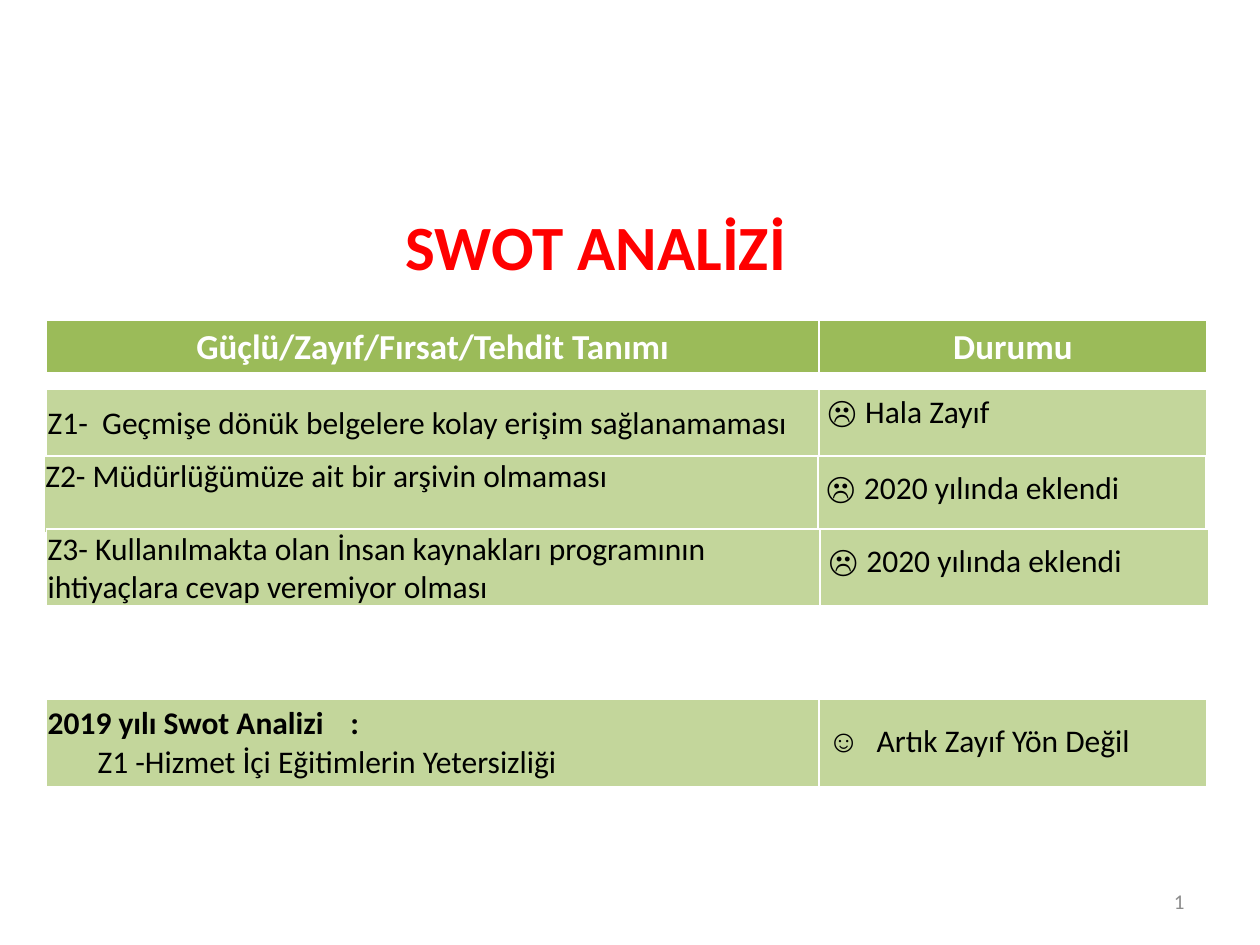
from lxml.etree import SubElement
from pptx import Presentation
from pptx.dml.color import RGBColor
from pptx.enum.text import MSO_ANCHOR as ANCHOR, MSO_AUTO_SIZE as AUTO, PP_ALIGN as ALIGN
from pptx.oxml.ns import qn
from pptx.util import Pt

GREEN, PALE, WHITE, BLACK = "9BBB59", "C3D69B", "FFFFFF", "000000"
LEFT = 26.6
HEADER = dict(name="Calibri", size=Pt(20), bold=True)
BODY = dict(name="Calibri", size=Pt(18), bold=False)
BODY_BOLD = {**BODY, "bold": True}
SYMBOL = {**BODY, "name": "Arial"}
TIGHT = dict(margin_left=Pt(0.7), margin_right=Pt(0.7), margin_top=Pt(0.7),
             margin_bottom=Pt(0))
STATUS = {**TIGHT, "margin_left": Pt(5), "margin_bottom": Pt(14.4),
          "vertical_anchor": ANCHOR.BOTTOM}


def rgb(color):
    return RGBColor.from_string(color)


def set_attrs(obj, values):
    for name, value in values.items():
        setattr(obj, name, value)


def add_run(p, text, font, color=BLACK):
    r = p.add_run()
    r.text = text
    set_attrs(r.font, font)
    r.font.color.rgb = rgb(color)


def add_tab_stop(p, pos):
    tabs = SubElement(p._p.get_or_add_pPr(), qn("a:tabLst"))
    SubElement(tabs, qn("a:tab"), pos=str(Pt(pos)), algn="l")


def set_borders(cell, bottom):
    """Draw white cell borders, 1 pt wide except for the bottom one."""
    tcPr = cell._tc.get_or_add_tcPr()
    sides = ("lnL", 1), ("lnR", 1), ("lnT", 1), ("lnB", bottom)
    for i, (side, width) in enumerate(sides):
        ln = SubElement(tcPr, qn(f"a:{side}"), w=str(Pt(width)))
        fill = SubElement(ln, qn("a:solidFill"))
        SubElement(fill, qn("a:srgbClr"), val=WHITE)
        tcPr.insert(i, ln)


def add_row_table(slide, left, top, height, fill, widths=(441.4, 221.8), bottom=1):
    """Add a one-row table and return its two cells."""
    frame = slide.shapes.add_table(1, 2, Pt(left), Pt(top), Pt(sum(widths)), Pt(height))
    table = frame.table
    for i, width in enumerate(widths):
        table.columns[i].width = Pt(width)
        cell = table.cell(0, i)
        cell.fill.solid()
        cell.fill.fore_color.rgb = rgb(fill)
        set_borders(cell, bottom)
    return table.cell(0, 0), table.cell(0, 1)


def add_title(slide):
    sp = slide.shapes.title
    set_attrs(sp, dict(left=Pt(65.5), top=Pt(115.2), width=Pt(550), height=Pt(51.1)))
    set_attrs(sp.text_frame, dict(auto_size=AUTO.NONE, vertical_anchor=ANCHOR.TOP))
    p = sp.text_frame.paragraphs[0]
    p.alignment = ALIGN.CENTER
    add_run(p, "SWOT ANALİZİ", dict(name="Calibri", size=Pt(36), bold=True), "FF0000")


def add_slide_number(slide, number):
    sp = slide.shapes.add_textbox(Pt(516), Pt(500.5), Pt(168), Pt(28.8))
    tf = sp.text_frame
    set_attrs(tf, dict(word_wrap=True, vertical_anchor=ANCHOR.MIDDLE))
    p = tf.paragraphs[0]
    p.alignment = ALIGN.RIGHT
    add_run(p, number, dict(name="Calibri", size=Pt(12)), "8C8C8C")
    field = p.runs[0]._r
    field.tag = qn("a:fld")
    field.set("id", "{B6F15528-21DE-4FAA-801E-634DDDAF4B2B}")
    field.set("type", "slidenum")


def add_header(slide):
    cells = add_row_table(slide, LEFT, 182.9, 29.8, GREEN, bottom=3)
    for cell, text in zip(cells, ("Güçlü/Zayıf/Fırsat/Tehdit Tanımı", "Durumu")):
        p = cell.text_frame.paragraphs[0]
        p.alignment = ALIGN.CENTER
        add_run(p, text, HEADER, WHITE)


def add_status(cell, symbol, text):
    set_attrs(cell, STATUS)
    p = cell.text_frame.paragraphs[0]
    if "\t" in symbol:
        add_tab_stop(p, 28)
    add_run(p, symbol, SYMBOL)
    add_run(p, text, BODY)


def add_weakness(slide, left, top, height, text, status, anchor=ANCHOR.MIDDLE, first=441.4):
    cell, status_cell = add_row_table(slide, left, top, height, PALE, (first, 221.8))
    set_attrs(cell, {**TIGHT, "vertical_anchor": anchor})
    add_run(cell.text_frame.paragraphs[0], text, BODY)
    add_status(status_cell, "☹ ", status)


def add_previous_year(slide):
    cell, status_cell = add_row_table(slide, LEFT, 399.6, 49.7, PALE)
    set_attrs(cell, {**TIGHT, "vertical_anchor": ANCHOR.MIDDLE})
    tf = cell.text_frame
    p = tf.paragraphs[0]
    add_tab_stop(p, 173)
    add_run(p, "2019 yılı Swot Analizi\t:", BODY_BOLD)
    p = tf.add_paragraph()
    p._p.get_or_add_pPr().set("marL", str(Pt(28.5)))
    add_run(p, "Z1 -Hizmet İçi Eğitimlerin Yetersizliği", BODY)
    add_status(status_cell, "☺\t", "Artık Zayıf Yön Değil")


def main():
    prs = Presentation()
    prs.slide_width, prs.slide_height = Pt(720), Pt(540)
    slide = prs.slides.add_slide(prs.slide_layouts[5])
    add_title(slide)
    add_slide_number(slide, "3")
    add_header(slide)
    add_weakness(slide, LEFT, 222.5, 38.9,
                 "Z1-  Geçmişe dönük belgelere kolay erişim sağlanamaması", "Hala Zayıf")
    add_weakness(slide, 25.2, 260.6, 43.9, "Z2- Müdürlüğümüze ait bir arşivin olmaması",
                 "2020 yılında eklendi", ANCHOR.TOP, 442.1)
    add_weakness(slide, LEFT, 302.4, 43.9,
                 "Z3- Kullanılmakta olan İnsan kaynakları programının "
                 "ihtiyaçlara cevap veremiyor olması",
                 "2020 yılında eklendi", first=442.1)
    add_previous_year(slide)
    prs.save("out.pptx")


if __name__ == "__main__":
    main()
